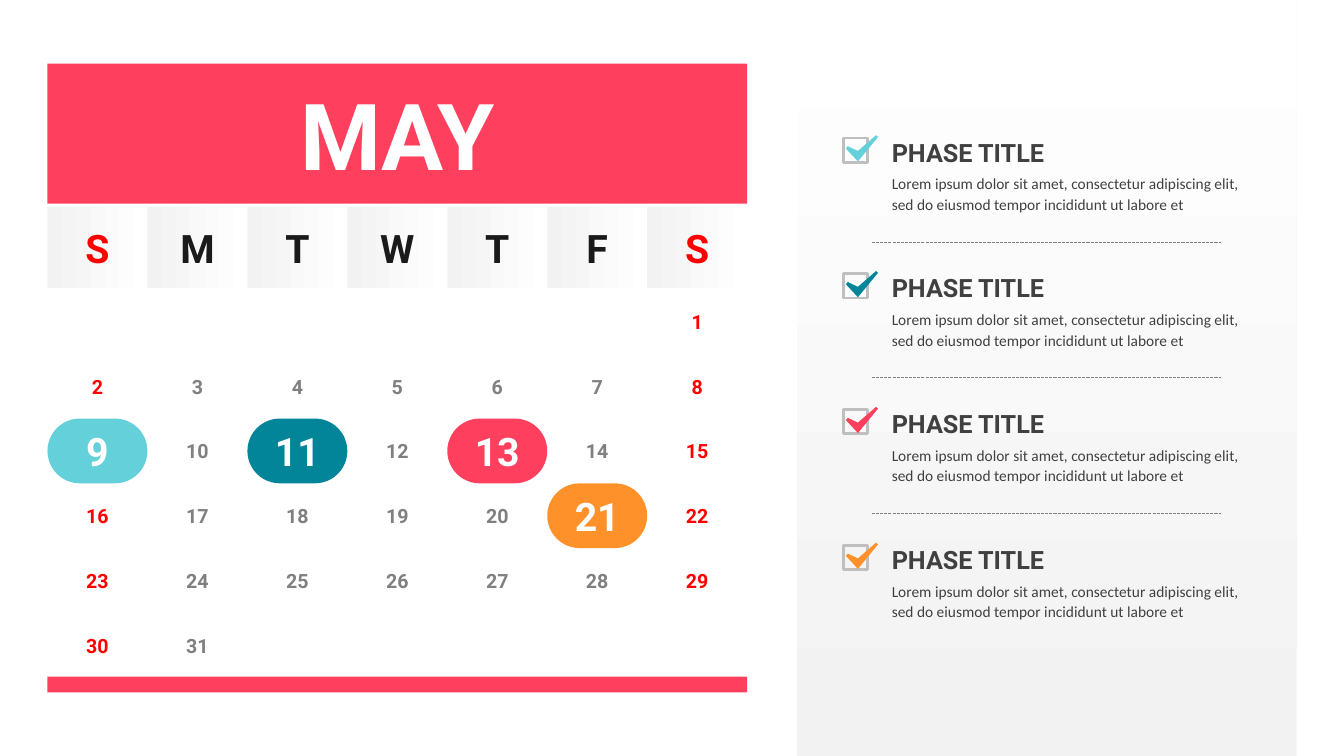
from lxml.etree import SubElement
from pptx import Presentation
from pptx.dml.color import RGBColor
from pptx.enum.dml import MSO_LINE
from pptx.enum.shapes import MSO_CONNECTOR, MSO_SHAPE
from pptx.enum.text import MSO_ANCHOR, MSO_AUTO_SIZE, PP_ALIGN
from pptx.oxml.ns import qn
from pptx.util import Pt

CORAL, AQUA, TEAL, ORANGE = "FF3F5E", "64D0DA", "028599", "FE912A"
RED, BLACK, GRAY, DARK_GRAY = "FF0000", "1A1A1A", "808080", "404040"
WHITE, PALE, BOX_GRAY = "FFFFFF", "F2F2F2", "BFBFBF"

CALENDAR_LEFT, CALENDAR_WIDTH = 33.9, 499.8
COLUMN_WIDTH = CALENDAR_WIDTH / 7
WEEKS_TOP, WEEK_HEIGHT = 206.5, 46.25
FIRST_WEEKDAY = 6
MARKED_DAYS = {9: AQUA, 11: TEAL, 13: CORAL, 21: ORANGE}

PHASE_COLORS = [AQUA, TEAL, CORAL, ORANGE]
PHASE_TOP, PHASE_STEP = 95.6, 97
PHASE_TEXT = ("Lorem ipsum dolor sit amet, consectetur adipiscing elit, "
              "sed do eiusmod tempor incididunt ut labore et")
CHECK_MARK = [(21.6, 0), (23, 1.3), (8.6, 18.7), (0, 9.5), (1.4, 7.9), (8.6, 11.3)]


def rgb(hex_color):
    return RGBColor.from_string(hex_color)


def paint(shape, color):
    shape.fill.solid()
    shape.fill.fore_color.rgb = rgb(color)


def paint_gradient(shape, angle):
    shape.fill.gradient()
    shape.fill.gradient_angle = angle
    for stop, color in zip(shape.fill.gradient_stops, (PALE, WHITE)):
        stop.color.rgb = rgb(color)


def add_block(slide, kind, left, top, width, height):
    """Add a preset shape with neither outline nor shadow."""
    block = slide.shapes.add_shape(kind, Pt(left), Pt(top), Pt(width), Pt(height))
    block.shadow.inherit = False
    block.line.fill.background()
    return block


def prepare_frame(shape):
    """Remove the insets, wrap the text and return the text frame."""
    frame = shape.text_frame
    frame.margin_left = frame.margin_right = Pt(0)
    frame.margin_top = frame.margin_bottom = Pt(0)
    frame.word_wrap = True
    return frame


def add_run(paragraph, text, size, color, font="Roboto", bold=True):
    run = paragraph.add_run()
    run.text = text
    run.font.name = font
    run.font.size = Pt(size)
    run.font.bold = bold
    run.font.color.rgb = rgb(color)


def write_centered(shape, text, size, color):
    frame = prepare_frame(shape)
    frame.auto_size = MSO_AUTO_SIZE.NONE
    frame.vertical_anchor = MSO_ANCHOR.MIDDLE
    paragraph = frame.paragraphs[0]
    paragraph.alignment = PP_ALIGN.CENTER
    add_run(paragraph, text, size, color)


def column_left(column):
    return CALENDAR_LEFT + column * COLUMN_WIDTH


def day_color(column, workday_color):
    return RED if column in (0, 6) else workday_color


def add_month_title(slide, month):
    title = slide.shapes.title
    title.left, title.top = Pt(CALENDAR_LEFT), Pt(45.4)
    title.width, title.height = Pt(CALENDAR_WIDTH), Pt(100)
    paint(title, CORAL)
    write_centered(title, month, 66, WHITE)


def add_weekdays(slide):
    for column, letter in enumerate("SMTWTFS"):
        header = add_block(slide, MSO_SHAPE.RECTANGLE, column_left(column), 148.2,
                           COLUMN_WIDTH, 57.6)
        paint_gradient(header, 0)
        write_centered(header, letter, 28, day_color(column, BLACK))


def add_day(slide, day):
    week, column = divmod(day - 1 + FIRST_WEEKDAY, 7)
    cell = (column_left(column), WEEKS_TOP + week * WEEK_HEIGHT,
            COLUMN_WIDTH, WEEK_HEIGHT)
    if day in MARKED_DAYS:
        pill = add_block(slide, MSO_SHAPE.ROUNDED_RECTANGLE, *cell)
        pill.adjustments[0] = 0.5
        paint(pill, MARKED_DAYS[day])
        write_centered(pill, str(day), 28, WHITE)
    else:
        number = slide.shapes.add_textbox(*map(Pt, cell))
        write_centered(number, str(day), 14, day_color(column, GRAY))


def add_check_box(slide, top, color):
    box = add_block(slide, MSO_SHAPE.RECTANGLE, 602.7, top + 3, 17.3, 17.3)
    box.fill.background()
    box.line.color.rgb = rgb(BOX_GRAY)
    box.line.width = Pt(2)

    points = [(Pt(604.2 + x), Pt(top + 1 + y)) for x, y in CHECK_MARK]
    outline = slide.shapes.build_freeform(*points[0])
    outline.add_line_segments(points[1:], close=True)
    check = outline.convert_to_shape()
    check.shadow.inherit = False
    check.line.fill.background()
    paint(check, color)


def add_phase_text(slide, top):
    box = slide.shapes.add_textbox(Pt(637), Pt(top), Pt(255), Pt(57.6))
    frame = prepare_frame(box)
    frame.auto_size = MSO_AUTO_SIZE.SHAPE_TO_FIT_TEXT
    heading, body = frame.paragraphs[0], frame.add_paragraph()
    for paragraph in (heading, body):
        paragraph.line_spacing = 1.1
        paragraph.space_before = Pt(4)
    add_run(heading, "PHASE TITLE", 18, DARK_GRAY)
    add_run(body, PHASE_TEXT, 11, DARK_GRAY, "Calibri", False)


def add_divider(slide, y):
    divider = slide.shapes.add_connector(MSO_CONNECTOR.STRAIGHT,
                                         Pt(622.8), Pt(y), Pt(872), Pt(y))
    divider.line.color.rgb = rgb(GRAY)
    divider.line.width = Pt(0.75)
    divider.line.dash_style = MSO_LINE.SQUARE_DOT
    SubElement(divider.element.spPr, qn("a:effectLst"))


def main():
    presentation = Presentation()
    presentation.slide_width, presentation.slide_height = Pt(960), Pt(540)
    slide = presentation.slides.add_slide(presentation.slide_layouts[5])

    add_month_title(slide, "MAY")
    add_weekdays(slide)
    for day in range(1, 32):
        add_day(slide, day)
    footer_bar = add_block(slide, MSO_SHAPE.RECTANGLE, CALENDAR_LEFT, 483.4,
                           CALENDAR_WIDTH, 11.2)
    paint(footer_bar, CORAL)

    phase_panel = add_block(slide, MSO_SHAPE.RECTANGLE, 569, 0, 357.2, 540)
    paint_gradient(phase_panel, 90)
    for index, color in enumerate(PHASE_COLORS):
        top = PHASE_TOP + index * PHASE_STEP
        if index > 0:
            add_divider(slide, top - 19.7)
        add_check_box(slide, top, color)
        add_phase_text(slide, top)

    presentation.save("out.pptx")


if __name__ == "__main__":
    main()
